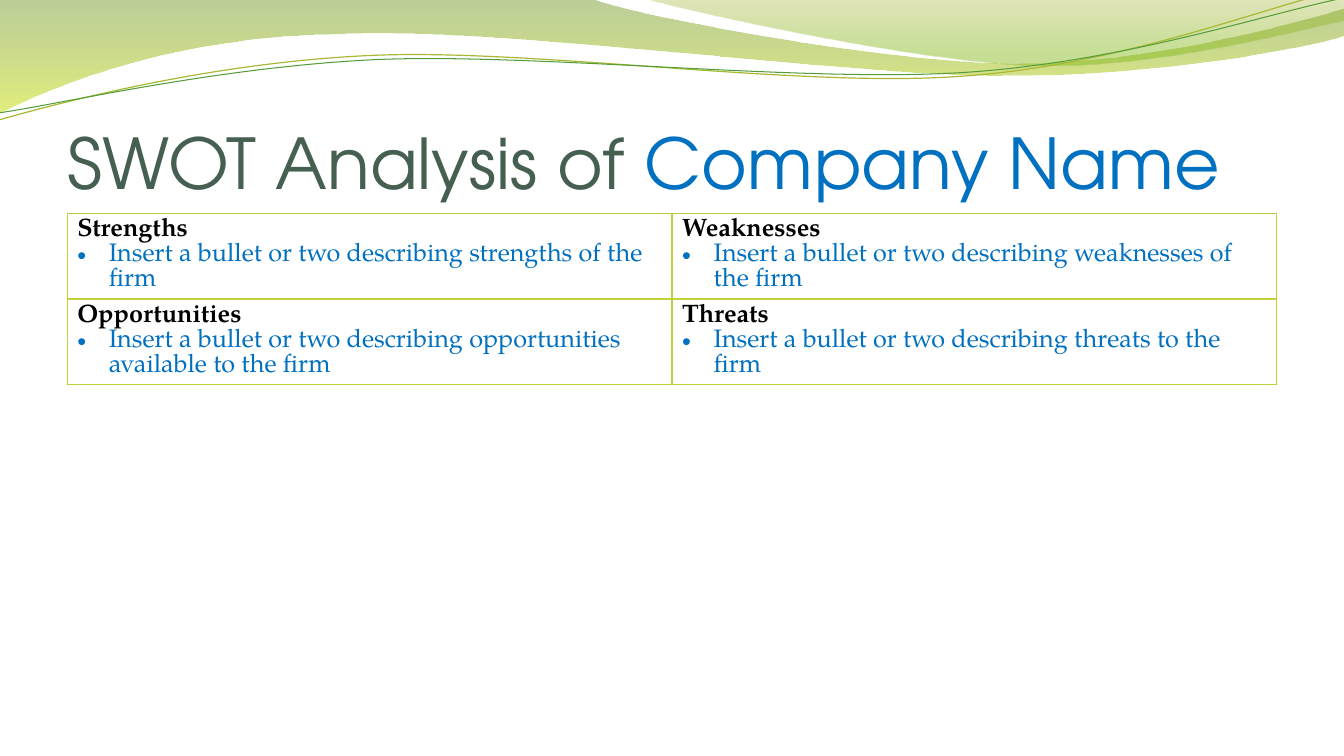
"""Build a SWOT analysis slide with a green wave banner."""
from math import cos, radians, sin
from lxml import etree
from pptx import Presentation
from pptx.dml.color import RGBColor
from pptx.enum.text import MSO_ANCHOR, MSO_AUTO_SIZE, PP_ALIGN
from pptx.oxml.ns import qn
from pptx.util import Pt

LEFT, BOTTOM = PP_ALIGN.LEFT, MSO_ANCHOR.BOTTOM
NO_FIT = MSO_AUTO_SIZE.NONE
HEAD_FONT, BODY_FONT = "TeX Gyre Adventor", "TeX Gyre Pagella"
BLUE, BORDER = "0070C0", "C0CF3A"

TITLE = [("SWOT Analysis of ", "455F51"), ("Company Name", BLUE)]
SWOT = [
    [("Strengths", "Insert a bullet or two describing strengths of the firm"),
     ("Weaknesses", "Insert a bullet or two describing weaknesses of the firm")],
    [("Opportunities", "Insert a bullet or two describing opportunities available to the firm"),
     ("Threats", "Insert a bullet or two describing threats to the firm")],
]

# Outlines in inches: each step is one corner, or two handles and an end.
BANDS = [
    ([[(0, 0)], [(5.87, -0.01)], [(6.34, 0.17), (8.84, 0.63), (10.11, 0.63)],
      [(11.37, 0.63), (12.77, 0.26), (13.33, 0.09)], [(13.34, 0.36)],
      [(13.11, 0.44), (11.59, 0.76), (9.94, 0.75)],
      [(8.29, 0.75), (5.09, 0.28), (3.43, 0.34)],
      [(1.72, 0.36), (0.61, 0.83), (-0.02, 1.13)]],
     [(0, "69921C", 45), (1, "CCE10F", 55)]),
    ([[(6.38, -0.01)], [(6.79, 0.11), (9.09, 0.62), (10.25, 0.65)],
      [(11.4, 0.69), (12.82, 0.32), (13.33, 0.21)], [(13.33, 0)]],
     [(0, "9BAA1A", 30), (0.8, "81BA16", 45)]),
]
STRANDS = [
    ([[(-0.01, 1.19)], [(0.63, 1.01), (2.1, 0.62), (3.69, 0.55)],
      [(5.27, 0.48), (7.89, 0.87), (9.49, 0.76)],
      [(11.1, 0.66), (12.51, 0.08), (13.3, -0.1)]], "A9B733", 0.85),
    ([[(-0.01, 1.12)], [(0.62, 1.03), (2.18, 0.66), (3.77, 0.59)],
      [(5.37, 0.53), (7.96, 0.82), (9.55, 0.72)],
      [(11.14, 0.62), (12.55, 0.14), (13.33, -0.02)]], "549E39", 0.75),
]
TILT = -2.7


def rgb(value):
    return RGBColor.from_string(value)


def add_text(p, text, size=18, color="000000", font=BODY_FONT, bold=False):
    r = p.add_run()
    r.text = text
    r.font.size, r.font.name, r.font.bold = Pt(size), font, bold
    r.font.color.rgb = rgb(color)


def add_outline(shapes, outline, close):
    steps = [[(Pt(x * 72), Pt(y * 72)) for x, y in step] for step in outline]
    builder = shapes.build_freeform(*steps[0][0])
    builder.add_line_segments([step[-1] for step in steps[1:]], close=close)
    sp = builder.convert_to_shape()
    sp.shadow.inherit = False
    for node, step in zip(list(sp.element.iter(qn("a:lnTo"))), steps[1:]):
        if len(step) == 3:
            curve = etree.Element(qn("a:cubicBezTo"))
            for x, y in step:
                etree.SubElement(curve, qn("a:pt"), x=str(x - sp.left), y=str(y - sp.top))
            node.getparent().replace(node, curve)
    return sp


def add_band(shapes, outline, stops):
    sp = add_outline(shapes, outline, True)
    sp.line.fill.background()
    sp.fill.gradient()
    sp.fill.gradient_angle = 270
    for stop, (position, color, _) in zip(sp.fill.gradient_stops, stops):
        stop.position = position
        stop.color.rgb = rgb(color)
    for node, (_, _, alpha) in zip(sp.element.spPr.iter(qn("a:srgbClr")), stops):
        etree.SubElement(node, qn("a:alpha"), val=str(alpha * 1000))


def level(outline):
    (x0, y0), (x1, y1) = outline[0][0], outline[-1][-1]
    cx, cy = (x0 + x1) / 2, (y0 + y1) / 2
    c, s = cos(radians(-TILT)), sin(radians(-TILT))
    return [[(cx + (x - cx) * c - (y - cy) * s, cy + (x - cx) * s + (y - cy) * c)
             for x, y in step] for step in outline]


def add_strand(shapes, outline, color, width):
    flat = level(outline)
    sp = add_outline(shapes, flat, False)
    ends = [step[-1][1] for step in flat]
    drift = ((max(ends) + min(ends)) - (ends[0] + ends[-1])) / 2
    sp.left -= Pt(72 * drift * sin(radians(TILT)))
    sp.top -= Pt(72 * drift * (1 - cos(radians(TILT))))
    sp.rotation = TILT
    sp.fill.background()
    sp.line.color.rgb = rgb(color)
    sp.line.width = Pt(width)


def set_borders(cell, bottom):
    tcPr = cell._tc.get_or_add_tcPr()
    for i, (side, width) in enumerate(zip("LRTB", (1, 1, 1, bottom))):
        ln = etree.Element(qn("a:ln" + side), w=str(Pt(width)))
        fill = etree.SubElement(ln, qn("a:solidFill"))
        etree.SubElement(fill, qn("a:srgbClr"), val=BORDER)
        tcPr.insert(i, ln)


def fill_cell(cell, heading, point, bottom):
    cell.fill.background()
    set_borders(cell, bottom)
    tf = cell.text_frame
    add_text(tf.paragraphs[0], heading, bold=True)
    p = tf.add_paragraph()
    add_text(p, point, color=BLUE)
    pPr = p._p.get_or_add_pPr()
    pPr.set("marL", str(Pt(22.5)))
    pPr.set("indent", str(-Pt(22.5)))
    etree.SubElement(pPr, qn("a:buFont"), typeface="Arial")
    etree.SubElement(pPr, qn("a:buChar"), char="•")
    for p in tf.paragraphs:
        p.line_spacing = Pt(18)


def main():
    prs = Presentation()
    prs.slide_width, prs.slide_height = Pt(960), Pt(540)
    s = prs.slides.add_slide(prs.slide_layouts[5])
    for outline, stops in BANDS:
        add_band(s.shapes, outline, stops)
    for outline, color, width in STRANDS:
        add_strand(s.shapes, outline, color, width)

    title = s.shapes.title
    s.shapes.element.append(title.element)
    title.left, title.top, title.width, title.height = Pt(48), Pt(55.5), Pt(864), Pt(90)
    tf = title.text_frame
    tf.auto_size, tf.word_wrap, tf.vertical_anchor = NO_FIT, True, BOTTOM
    tf.margin_left = tf.margin_right = tf.margin_bottom = 0
    p = tf.paragraphs[0]
    p.alignment = LEFT
    for text, color in TITLE:
        add_text(p, text, size=50, color=color, font=HEAD_FONT)

    frame = s.shapes.add_table(2, 2, Pt(48), Pt(152.3), Pt(864), Pt(144))
    table = frame.table
    table.first_row = table.horz_banding = False
    for i, row in enumerate(SWOT):
        table.rows[i].height = Pt(29.5)
        for j, (heading, point) in enumerate(row):
            fill_cell(table.cell(i, j), heading, point, bottom=2 - i)
    frame.height = Pt(144)
    prs.save("out.pptx")


if __name__ == "__main__":
    main()
